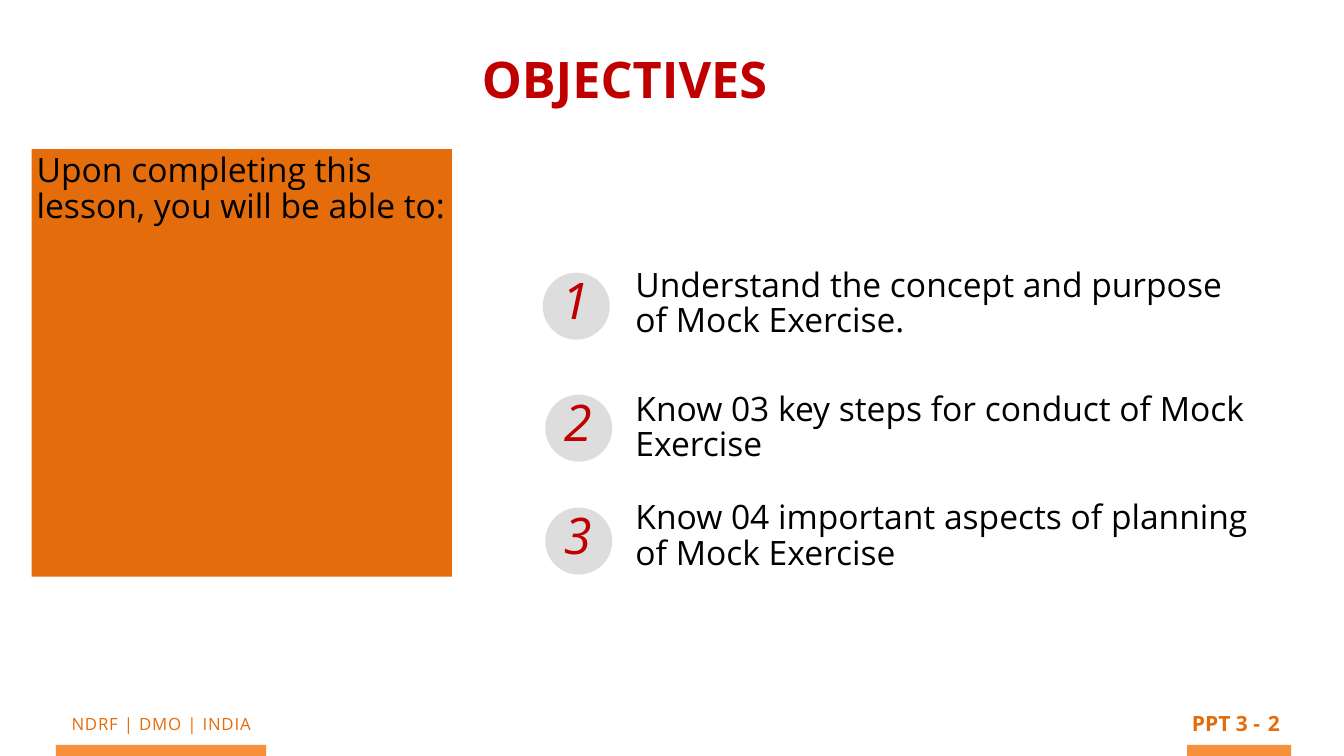
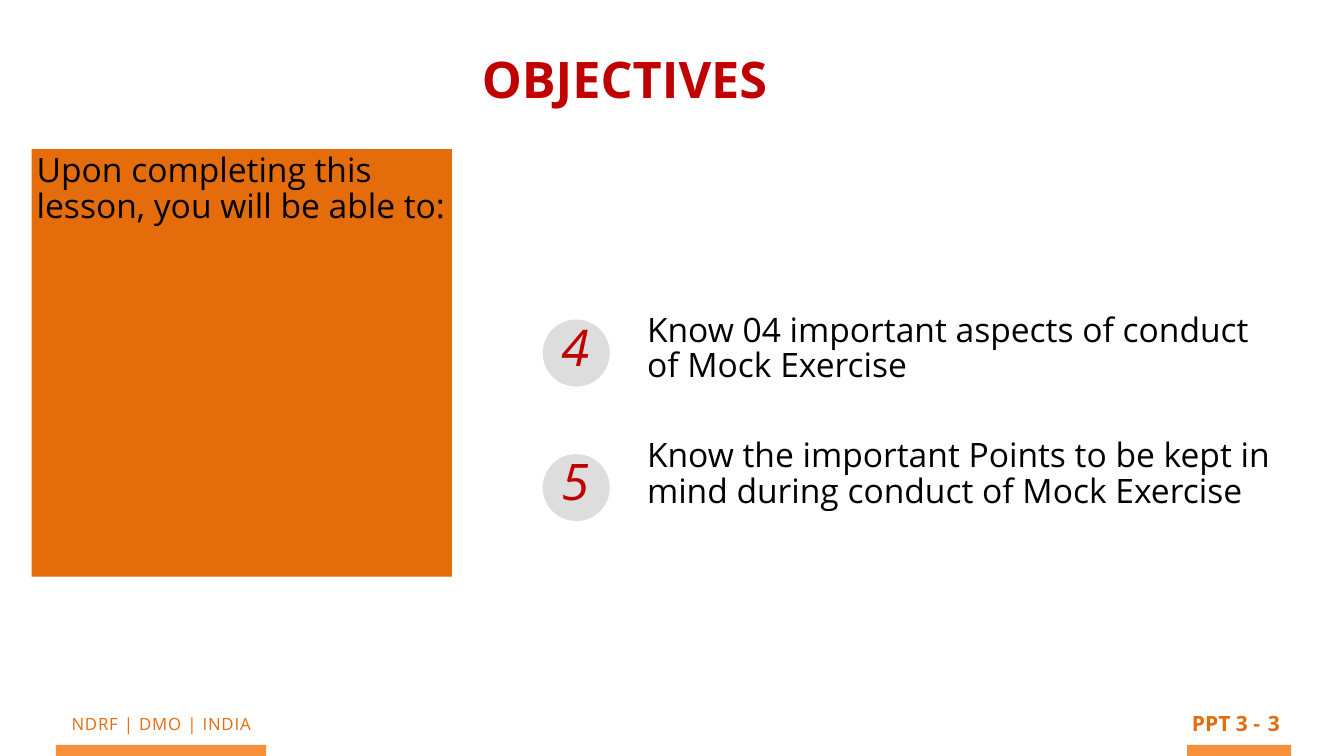
from pptx import Presentation
from pptx.dml.color import RGBColor
from pptx.enum.shapes import MSO_SHAPE as Shape
from pptx.enum.text import MSO_ANCHOR as Anchor, MSO_AUTO_SIZE as AutoSize, PP_ALIGN as Align
from pptx.util import Inches, Pt

WIDTH, HEIGHT = 26.67, 15
FONT = "Open Sans"
RED, ORANGE, BAND, GREY, BLACK = "C00000", "E46C0A", "F7903B", "DDDDDD", "000000"
LINE_SPACING = 0.88
BADGE_SIZE = 1.33
BAND_HEIGHT = 0.22

TITLE = "OBJECTIVES"
INTRO = "Upon completing this lesson, you will be able to:"
FOOTER = "NDRF | DMO | INDIA"
PAGE_LABEL = "PPT 3 -"
BANDS = [(1.11, 4.17), (23.56, 2.06)]

SLIDES = [
    {
        "page": "2",
        "box": (12.52, 5.24, 12.54, 6.84),
        "objectives": [
            ("1", "Understand the concept and purpose of Mock Exercise.", 0, (10.77, 5.41)),
            ("2", "Know 03 key steps for conduct of Mock Exercise", 76, (10.82, 7.83)),
            ("3", "Know 04 important aspects of planning of Mock Exercise", 54, (10.82, 10.07)),
        ],
    },
    {
        "page": "3",
        "box": (12.75, 6.14, 12.77, 4.49),
        "objectives": [
            ("4", "Know 04 important aspects of conduct of Mock Exercise", 0, (10.77, 6.34)),
            ("5", "Know the important Points to be kept in mind during conduct of Mock Exercise",
             78, (10.77, 9.01)),
        ],
    },
]


def color(value):
    return RGBColor.from_string(value)


def write(shape, lines, size, ink, bold=False, italic=False, align=Align.LEFT,
          inset=0.09, wrap=True, spacing=None):
    frame = shape.text_frame
    frame.text = "\n".join(lines)
    frame.auto_size = AutoSize.NONE
    frame.word_wrap = wrap
    frame.vertical_anchor = Anchor.TOP
    frame.margin_left = frame.margin_right = Inches(inset)
    frame.margin_top = frame.margin_bottom = Inches(inset)
    for paragraph in frame.paragraphs:
        paragraph.alignment = align
        paragraph.line_spacing = spacing
        for run in paragraph.runs:
            run.font.name = FONT
            run.font.size = Pt(size)
            run.font.bold = bold
            run.font.italic = italic
            run.font.color.rgb = color(ink)
    return frame


def add_text(shapes, box, lines, size, ink, **style):
    text_box = shapes.add_textbox(*map(Inches, box))
    return write(text_box, lines, size, ink, **style)


def add_filled(shapes, kind, box, fill):
    shape = shapes.add_shape(kind, *map(Inches, box))
    shape.shadow.inherit = False
    shape.fill.solid()
    shape.fill.fore_color.rgb = color(fill)
    shape.line.fill.background()
    return shape


def add_footer(shapes, page):
    footer = add_text(shapes, (0.66, 14.08, 5.08, 0.58), [FOOTER], 24, ORANGE, align=Align.CENTER)
    footer.paragraphs[0].runs[0].font._element.set("spc", "120")
    for left, width in BANDS:
        add_filled(shapes, Shape.RECTANGLE, (left, HEIGHT - BAND_HEIGHT, width, BAND_HEIGHT), BAND)
    add_text(shapes, (23.56, 14.01, 1.54, 0.68), [PAGE_LABEL], 30, ORANGE,
             bold=True, align=Align.CENTER, wrap=False)
    add_text(shapes, (25.07, 14.01, 0.42, 0.74), [page], 30, ORANGE, bold=True, align=Align.CENTER)


def add_title(slide):
    title = slide.shapes.title
    title.left, title.top, title.width, title.height = map(Inches, (9.47, 0.86, 5.85, 1.53))
    write(title, [TITLE], 72, RED, bold=True, wrap=False)


def add_intro(shapes):
    panel = add_filled(shapes, Shape.RECTANGLE, (0.63, 2.96, 8.34, 8.48), ORANGE)
    write(panel, [INTRO], 48, BLACK, inset=0.1, spacing=LINE_SPACING)


def add_badge(shapes, number, left, top):
    badge = shapes.add_group_shape().shapes
    add_filled(badge, Shape.OVAL, (left, top, BADGE_SIZE, BADGE_SIZE), GREY)
    add_text(badge, (left + 0.28, top - 0.16, 0.9, 1.84), [number], 72, RED, italic=True)


def add_objectives(shapes, box, objectives):
    lines = [text for _, text, _, _ in objectives]
    frame = add_text(shapes, box, lines, 48, BLACK, spacing=LINE_SPACING)
    for paragraph, (number, _, gap, corner) in zip(frame.paragraphs, objectives):
        paragraph.space_before = Pt(gap)
        add_badge(shapes, number, *corner)


def main():
    presentation = Presentation()
    presentation.slide_width, presentation.slide_height = Inches(WIDTH), Inches(HEIGHT)
    title_only = presentation.slide_layouts[5]
    for content in SLIDES:
        slide = presentation.slides.add_slide(title_only)
        add_title(slide)
        add_footer(slide.shapes, content["page"])
        add_intro(slide.shapes)
        add_objectives(slide.shapes, content["box"], content["objectives"])
    presentation.save("out.pptx")


if __name__ == "__main__":
    main()
